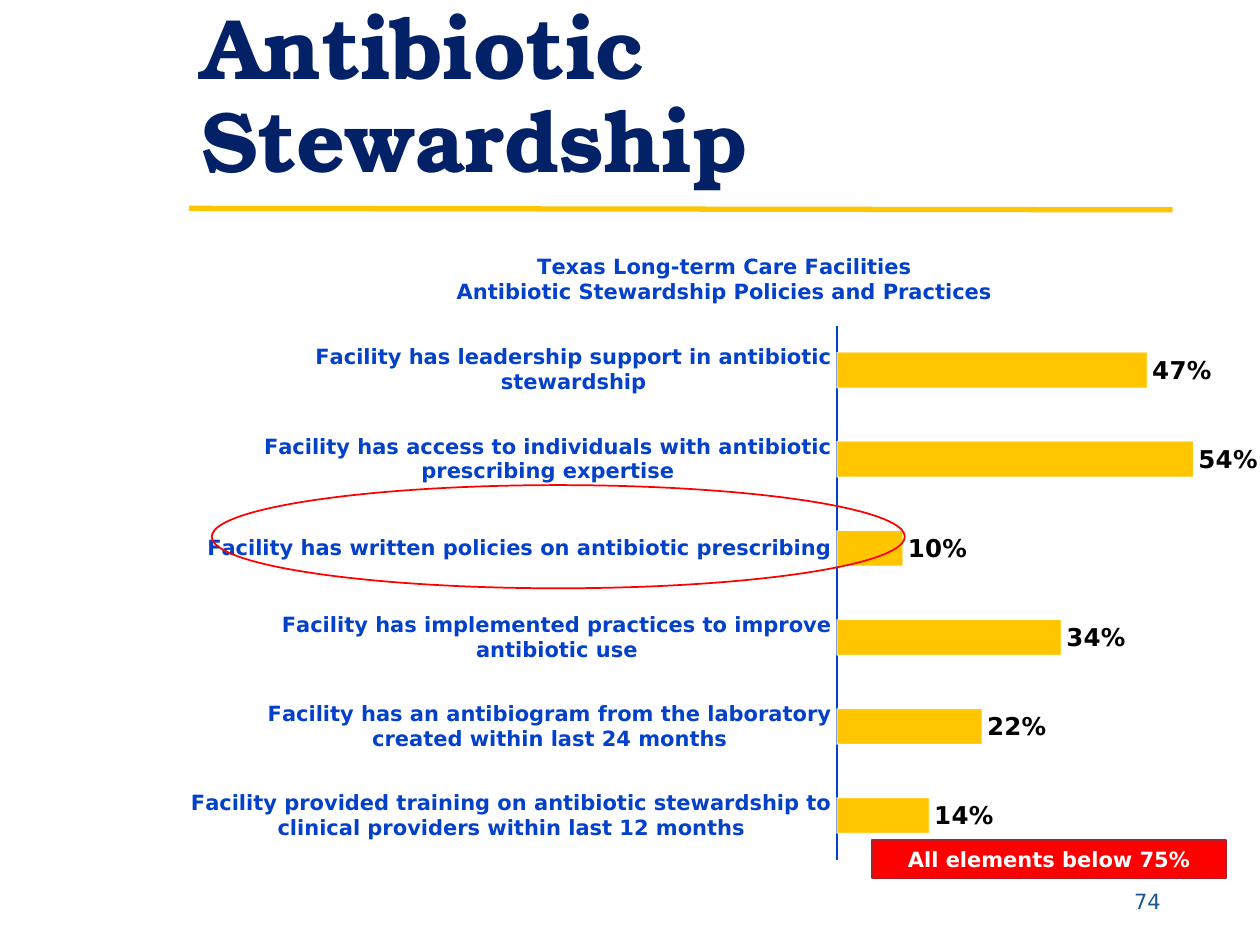
import pptx
import pptx.chart.data
import pptx.dml.color
import pptx.enum.chart
import pptx.enum.shapes
import pptx.enum.text
import pptx.oxml.ns
import pptx.util
from lxml import etree

Cm, Pt = pptx.util.Cm, pptx.util.Pt
qn = pptx.oxml.ns.qn
Align = pptx.enum.text.PP_ALIGN
Anchor = pptx.enum.text.MSO_ANCHOR
Shape = pptx.enum.shapes.MSO_SHAPE

COLORS = {
    "navy": "022167", "blue": "0441CA", "steel": "1A578E", "gold": "FFC600",
    "red": "FF0000", "brick": "AB2328", "white": "FFFFFF", "black": "000000",
}
SANS, SERIF = "DejaVu Sans", "TeX Gyre Bonum"
DATA = [
    ("Facility has leadership support in antibiotic stewardship", 0.47),
    ("Facility has access to individuals with antibiotic prescribing expertise", 0.54),
    ("Facility has written policies on antibiotic prescribing", 0.10),
    ("Facility has implemented practices to improve antibiotic use", 0.34),
    ("Facility has an antibiogram from the laboratory created within last 24 months", 0.22),
    ("Facility provided training on antibiotic stewardship to clinical providers "
     "within last 12 months", 0.14),
]


def rgb(name):
    return pptx.dml.color.RGBColor.from_string(COLORS[name])


def assign(target, **values):
    for key, value in values.items():
        setattr(target, key, value)


def style(font, size, color, bold=False, name=SANS):
    assign(font, size=Pt(size), bold=bold, name=name)
    font.color.rgb = rgb(color)


def stroke(line, color, width):
    line.color.rgb = rgb(color)
    line.width = Pt(width)


def write(frame, text, align, anchor, **look):
    assign(frame, word_wrap=True, vertical_anchor=anchor)
    para = frame.paragraphs[0]
    para.alignment = align
    run = para.add_run()
    run.text = text
    style(run.font, **look)
    return para


def header(slide, left, top, width, height):
    # Title above a gold rule
    box = slide.shapes.add_textbox(Cm(left), Cm(top), Cm(width), Cm(height - 0.22))
    para = write(box.text_frame, "Antibiotic Stewardship", Align.LEFT, Anchor.BOTTOM,
                 size=49, color="navy", bold=True, name=SERIF)
    para.line_spacing = 0.9
    base = top + height
    rule = slide.shapes.add_connector(
        pptx.enum.shapes.MSO_CONNECTOR.STRAIGHT,
        Cm(left), Cm(base), Cm(left + width), Cm(base + 0.03))
    stroke(rule.line, "gold", 3)
    etree.SubElement(rule.element.spPr, qn("a:effectLst"))


def place(chart, **parts):
    # Fix the inner plot area as fractions of the chart
    plot = chart.element.find(".//" + qn("c:plotArea"))
    for old in plot.findall(qn("c:layout")):
        plot.remove(old)
    layout = etree.Element(qn("c:layout"))
    manual = etree.SubElement(layout, qn("c:manualLayout"))
    modes = {"layoutTarget": "inner", "xMode": "edge", "yMode": "edge"}
    for tag, value in {**modes, **parts}.items():
        etree.SubElement(manual, qn("c:" + tag)).set("val", str(value))
    plot.insert(0, layout)


def bars(slide, left, top, width, height):
    data = pptx.chart.data.CategoryChartData(number_format="0%")
    data.categories = [name for name, _ in DATA]
    data.add_series("Series 1", [value for _, value in DATA])
    chart = slide.shapes.add_chart(
        pptx.enum.chart.XL_CHART_TYPE.BAR_CLUSTERED,
        Cm(left), Cm(top), Cm(width), Cm(height), data).chart
    style(chart.font, 10, "navy")
    chart.has_legend = False
    place(chart, x=0.605, y=0.15, w=0.37, h=0.83)

    # Chart title
    frame = chart.chart_title.text_frame
    frame.text = "Texas Long-term Care Facilities\nAntibiotic Stewardship Policies and Practices"
    chart.chart_title.include_in_layout = False
    for para in frame.paragraphs:
        for run in para.runs:
            style(run.font, 12, "blue", True)

    # Axes
    none = pptx.enum.chart.XL_TICK_MARK.NONE
    axis = chart.category_axis
    assign(axis, reverse_order=True, major_tick_mark=none, minor_tick_mark=none,
           has_major_gridlines=False)
    style(axis.tick_labels.font, 12, "blue", True)
    stroke(axis.format.line, "blue", 1.5)
    assign(chart.value_axis, visible=False, has_major_gridlines=False,
           minimum_scale=0, maximum_scale=0.6)

    # Bars and their labels
    plot = chart.plots[0]
    assign(plot, gap_width=150, overlap=-25, vary_by_categories=False)
    series = plot.series[0]
    series.format.fill.solid()
    series.format.fill.fore_color.rgb = rgb("gold")
    stroke(series.format.line, "white", 0.75)
    edge = series.format.line.fill._xPr.find(".//" + qn("a:srgbClr"))
    etree.SubElement(edge, qn("a:alpha")).set("val", "50000")
    labels = series.data_labels
    assign(labels, show_value=True, number_format="0%", number_format_is_linked=False,
           position=pptx.enum.chart.XL_LABEL_POSITION.OUTSIDE_END)
    style(labels.font, 14, "black", True)


def ring(slide, left, top, width, height):
    oval = slide.shapes.add_shape(Shape.OVAL, Cm(left), Cm(top), Cm(width), Cm(height))
    oval.shadow.inherit = False
    oval.fill.background()
    stroke(oval.line, "red", 1)


def banner(slide, left, top, width, height):
    box = slide.shapes.add_shape(Shape.RECTANGLE, Cm(left), Cm(top), Cm(width), Cm(height))
    box.shadow.inherit = False
    box.fill.solid()
    box.fill.fore_color.rgb = rgb("red")
    stroke(box.line, "brick", 1)
    write(box.text_frame, "All elements below 75%", Align.CENTER, Anchor.TOP,
          size=12, color="white", bold=True)
    box.text_frame.auto_size = pptx.enum.text.MSO_AUTO_SIZE.SHAPE_TO_FIT_TEXT


def number(slide, left, top, width, height):
    box = slide.shapes.add_textbox(Cm(left), Cm(top), Cm(width), Cm(height))
    write(box.text_frame, "74", Align.RIGHT, Anchor.MIDDLE, size=12, color="steel")


def main():
    deck = pptx.Presentation()
    assign(deck, slide_width=Cm(25.4), slide_height=Cm(19.05))
    slide = deck.slides.add_slide(deck.slide_layouts[6])
    header(slide, 3.81, 0.3, 19.83, 3.9)
    bars(slide, 3.81, 4.62, 21.59, 12.98)
    number(slide, 20.32, 17.65, 3.33, 1.02)
    ring(slide, 4.27, 9.78, 13.97, 2.08)
    banner(slide, 17.58, 16.94, 7.14, 0.76)
    deck.save("out.pptx")


if __name__ == "__main__":
    main()
